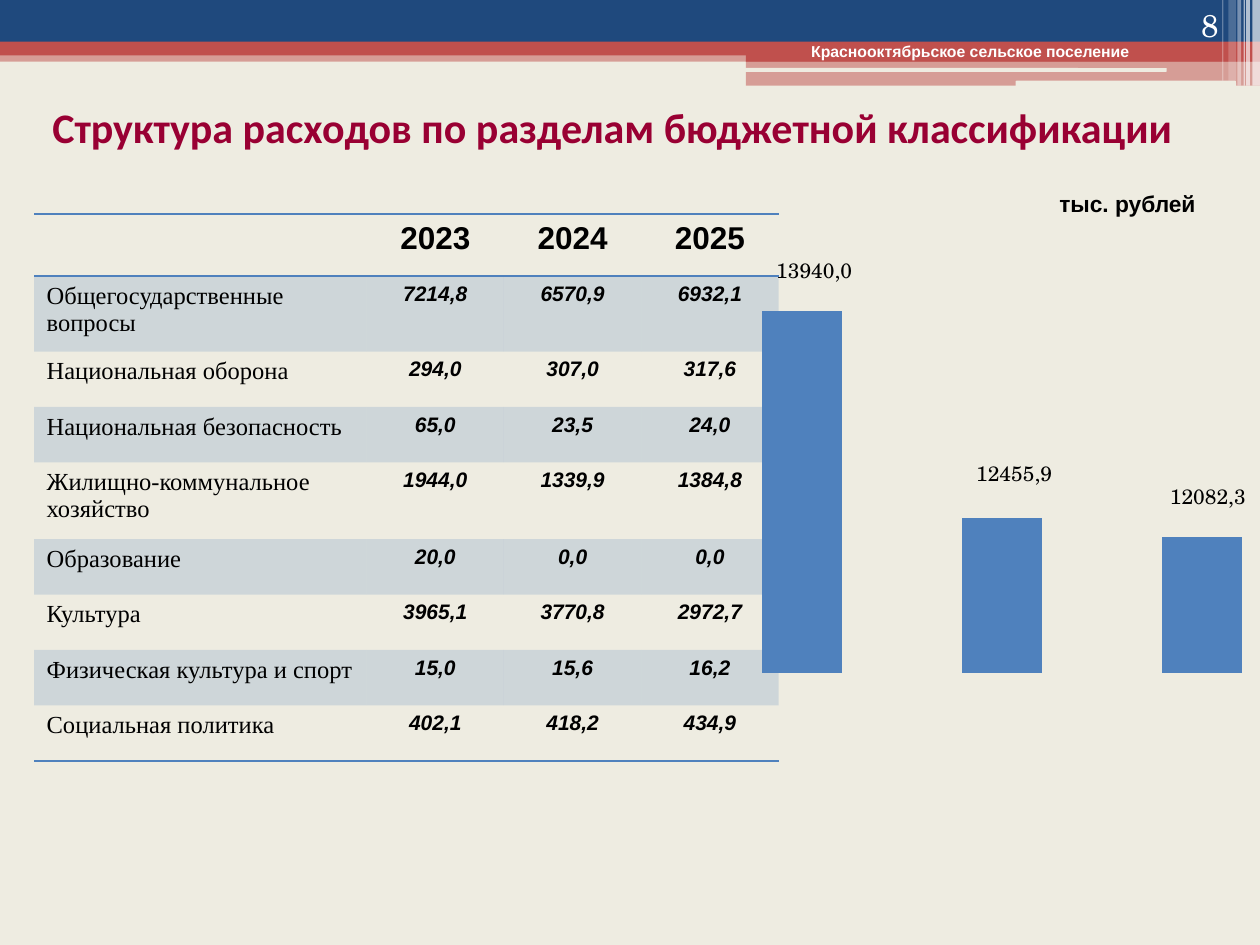
import dataclasses

import lxml.etree
import pptx
import pptx.chart.data
import pptx.dml.color
import pptx.enum.chart
import pptx.enum.shapes
import pptx.enum.text
import pptx.oxml
import pptx.oxml.ns
import pptx.util

Inches = pptx.util.Inches
Pt = pptx.util.Pt
qn = pptx.oxml.ns.qn
SHAPE = pptx.enum.shapes.MSO_SHAPE
ALIGN = pptx.enum.text.PP_ALIGN
ANCHOR = pptx.enum.text.MSO_ANCHOR


@dataclasses.dataclass(frozen=True)
class Theme:
    paper: str = "EEECE1"
    navy: str = "1F497D"
    red: str = "C0504D"
    blue: str = "4F81BD"
    title: str = "990033"
    white: str = "FFFFFF"
    black: str = "000000"
    sans: str = "Arial"
    serif: str = "Times New Roman"
    heading: str = "Calibri"
    school: str = "TeX Gyre Schola"
    title_size: float = 24
    big_size: float = 18
    row_size: float = 14
    unit_size: float = 13
    value_size: float = 12
    small_size: float = 9


T = Theme()

BANDS = [
    (0, 0.4, 10, 0.09, T.red, 50),
    (0, 0, 10, 0.34, T.navy, 100),
    (0, 0.33, 10, 0.11, T.red, 100),
    (5.92, 0.39, 4.08, 0.1, T.red, 100),
    (5.92, 0.48, 4.08, 0.2, T.red, 50),
]
SLITS = [(5.91, 0.54, 3.35, 0.03), (8.06, 0.64, 1.75, 0.05)]
STRIPES = [
    (9.94, 0.06, 0.68, 65),
    (9.89, 0.03, 0.68, 65),
    (9.87, 0.01, 0.68, 60),
    (9.82, 0.03, 0.68, 40),
    (9.75, 0.06, 0.64, 20),
    (9.7, 0.01, 0.64, 30),
]
YEARS = ["", "2023", "2024", "2025"]
EXPENSES = [
    ("Общегосударственные вопросы", "7214,8", "6570,9", "6932,1"),
    ("Национальная оборона", "294,0", "307,0", "317,6"),
    ("Национальная безопасность", "65,0", "23,5", "24,0"),
    ("Жилищно-коммунальное хозяйство", "1944,0", "1339,9", "1384,8"),
    ("Образование", "20,0", "0,0", "0,0"),
    ("Культура", "3965,1", "3770,8", "2972,7"),
    ("Физическая культура и спорт", "15,0", "15,6", "16,2"),
    ("Социальная политика", "402,1", "418,2", "434,9"),
]
COLUMN_WIDTHS = [2.64, 1.09, 1.09, 1.09]
ROW_HEIGHTS = [0.49, 0.6, 0.44, 0.44, 0.61, 0.44, 0.44, 0.44, 0.44]
TOTALS = [("13940,0", 0.02, -0.05), ("12455,9", 0.02, -0.06), ("12082,3", 0.01, -0.05)]


def rgb(color):
    return pptx.dml.color.RGBColor.from_string(color)


def paint(fill, element, color, opacity=100):
    fill.solid()
    fill.fore_color.rgb = rgb(color)
    if opacity < 100:
        clr = next(element.iter(qn("a:srgbClr")))
        lxml.etree.SubElement(clr, qn("a:alpha"), val=str(opacity * 1000))


def write(tf, text, size=T.value_size, font=T.sans, color=T.black, bold=False, italic=False, align=ALIGN.LEFT):
    p = tf.paragraphs[0]
    p.alignment = align
    r = p.add_run()
    r.text = text
    r.font.size, r.font.name = Pt(size), font
    r.font.bold, r.font.italic = bold, italic
    r.font.color.rgb = rgb(color)


def add_block(s, kind, x, y, w, h, color, opacity=100):
    sp = s.shapes.add_shape(kind, Inches(x), Inches(y), Inches(w), Inches(h))
    sp.shadow.inherit = False
    paint(sp.fill, sp.element.spPr, color, opacity)
    sp.line.fill.background()


def add_text(s, text, x, y, w, h, anchor=ANCHOR.TOP, **style):
    tf = s.shapes.add_textbox(Inches(x), Inches(y), Inches(w), Inches(h)).text_frame
    tf.word_wrap = True
    tf.vertical_anchor = anchor
    write(tf, text, **style)


def add_header(s):
    for band in BANDS:
        add_block(s, SHAPE.RECTANGLE, *band)
    for slit in SLITS:
        add_block(s, SHAPE.ROUNDED_RECTANGLE, *slit, T.paper)
    for x, w, h, opacity in STRIPES:
        add_block(s, SHAPE.RECTANGLE, x, 0, w, h, T.white, opacity)


def add_border(cell, tag):
    pr = cell._tc.get_or_add_tcPr()
    ln = lxml.etree.Element(qn(tag), w=str(Pt(1)))
    fill = lxml.etree.SubElement(ln, qn("a:solidFill"))
    lxml.etree.SubElement(fill, qn("a:srgbClr"), val=T.blue)
    pr.insert(len(pr.findall(qn("a:lnT"))), ln)


def add_expense_table(s):
    rows = [YEARS, *EXPENSES]
    frame = s.shapes.add_table(len(rows), len(YEARS), Inches(0.27), Inches(1.7),
                               Inches(sum(COLUMN_WIDTHS)), Inches(sum(ROW_HEIGHTS)))
    table = frame.table
    next(frame.element.iter(qn("a:tableStyleId"))).text = "{2D5ABB26-0587-4C30-8999-92F81FD0307C}"
    for column, width in zip(table.columns, COLUMN_WIDTHS):
        column.width = Inches(width)
    for row, height in zip(table.rows, ROW_HEIGHTS):
        row.height = Inches(height)
    for i, values in enumerate(rows):
        for j, text in enumerate(values):
            cell = table.cell(i, j)
            if i == 0:
                style = dict(size=T.big_size, bold=True, align=ALIGN.CENTER)
            elif j == 0:
                style = dict(size=T.row_size, font=T.serif)
            else:
                style = dict(bold=True, italic=True, align=ALIGN.CENTER)
            if text:
                write(cell.text_frame, text, **style)
            if i % 2:
                paint(cell.fill, cell._tc.get_or_add_tcPr(), T.blue, 20)
            else:
                cell.fill.background()
            if i == 0:
                add_border(cell, "a:lnT")
            if i in (0, len(rows) - 1):
                add_border(cell, "a:lnB")


def chart_layout(**places):
    layout = lxml.etree.Element(qn("c:layout"))
    manual = lxml.etree.SubElement(layout, qn("c:manualLayout"))
    for tag, val in places.items():
        lxml.etree.SubElement(manual, qn("c:" + tag), val=str(val))
    return layout


def hide_leader_lines(labels):
    for line in labels.findall(qn("c:showLeaderLines")):
        line.set("val", "0")
    uri = "http://schemas.microsoft.com/office/drawing/2012/chart"
    extensions = lxml.etree.SubElement(labels, qn("c:extLst"))
    ext = lxml.etree.SubElement(extensions, qn("c:ext"), nsmap={"c15": uri},
                                uri="{CE6537A1-D6FC-4f65-9D91-7224C49458BB}")
    lxml.etree.SubElement(ext, "{%s}showLeaderLines" % uri, val="0")


def add_totals_chart(s):
    data = pptx.chart.data.CategoryChartData(number_format="0.0")
    data.categories = ["1", "2", "3"]
    data.add_series("Series 1", [9818, 8777, 8683])
    chart = s.shapes.add_chart(pptx.enum.chart.XL_CHART_TYPE.COLUMN_CLUSTERED, Inches(5.47), Inches(2.02),
                               Inches(4.96), Inches(3.39), data).chart
    chart.has_legend = chart.has_title = False
    chart.font.size, chart.font.name = Pt(T.big_size), T.school
    chart.font.color.rgb = rgb(T.black)
    chart.value_axis.minimum_scale, chart.value_axis.maximum_scale = 8000, 10000
    chart.value_axis.has_major_gridlines = False
    chart.value_axis.visible = chart.category_axis.visible = False
    plot = chart.plots[0]
    plot.gap_width = 150
    plot.vary_by_categories = False
    series = plot.series[0]
    paint(series.format.fill, series.format.fill, T.blue)
    series.data_labels.show_value = True
    series.data_labels.font.size, series.data_labels.font.bold = Pt(T.value_size), True
    for i, (text, _, _) in enumerate(TOTALS):
        label = series.points[i].data_label
        write(label.text_frame, text, font=T.school, align=ALIGN.CENTER)
        label.position = pptx.enum.chart.XL_LABEL_POSITION.OUTSIDE_END
    for dlbl, (_, dx, dy) in zip(chart.element.iter(qn("c:dLbl")), TOTALS):
        dlbl.insert(1, chart_layout(x=dx, y=dy))
    hide_leader_lines(next(chart.element.iter(qn("c:dLbls"))))
    area = next(chart.element.iter(qn("c:plotArea")))
    for old in area.findall(qn("c:layout")):
        area.remove(old)
    area.insert(0, chart_layout(layoutTarget="inner", xMode="edge", yMode="edge", x=0.02, y=0.04, w=0.96, h=0.94))


def main():
    prs = pptx.Presentation()
    prs.slide_width, prs.slide_height = Inches(10), Inches(7.5)
    s = prs.slides.add_slide(prs.slide_layouts[6])
    paint(s.background.fill, s.element, T.paper)
    add_header(s)
    add_expense_table(s)
    add_text(s, "Краснооктябрьское сельское поселение", 6.34, 0.28, 3.23, 0.25,
             size=T.small_size, color=T.white, bold=True)
    add_text(s, "Структура расходов по разделам бюджетной классификации", 0, 0.76, 9.72, 0.5,
             size=T.title_size, font=T.heading, color=T.title, bold=True, align=ALIGN.CENTER)
    add_text(s, "8", 8.94, 0, 0.83, 0.4, anchor=ANCHOR.BOTTOM,
             size=T.big_size, font=T.school, color=T.white, align=ALIGN.RIGHT)
    add_text(s, "тыс. рублей", 8.31, 1.46, 1.5, 0.32, size=T.unit_size, bold=True)
    add_totals_chart(s)
    prs.save("out.pptx")


if __name__ == "__main__":
    main()
